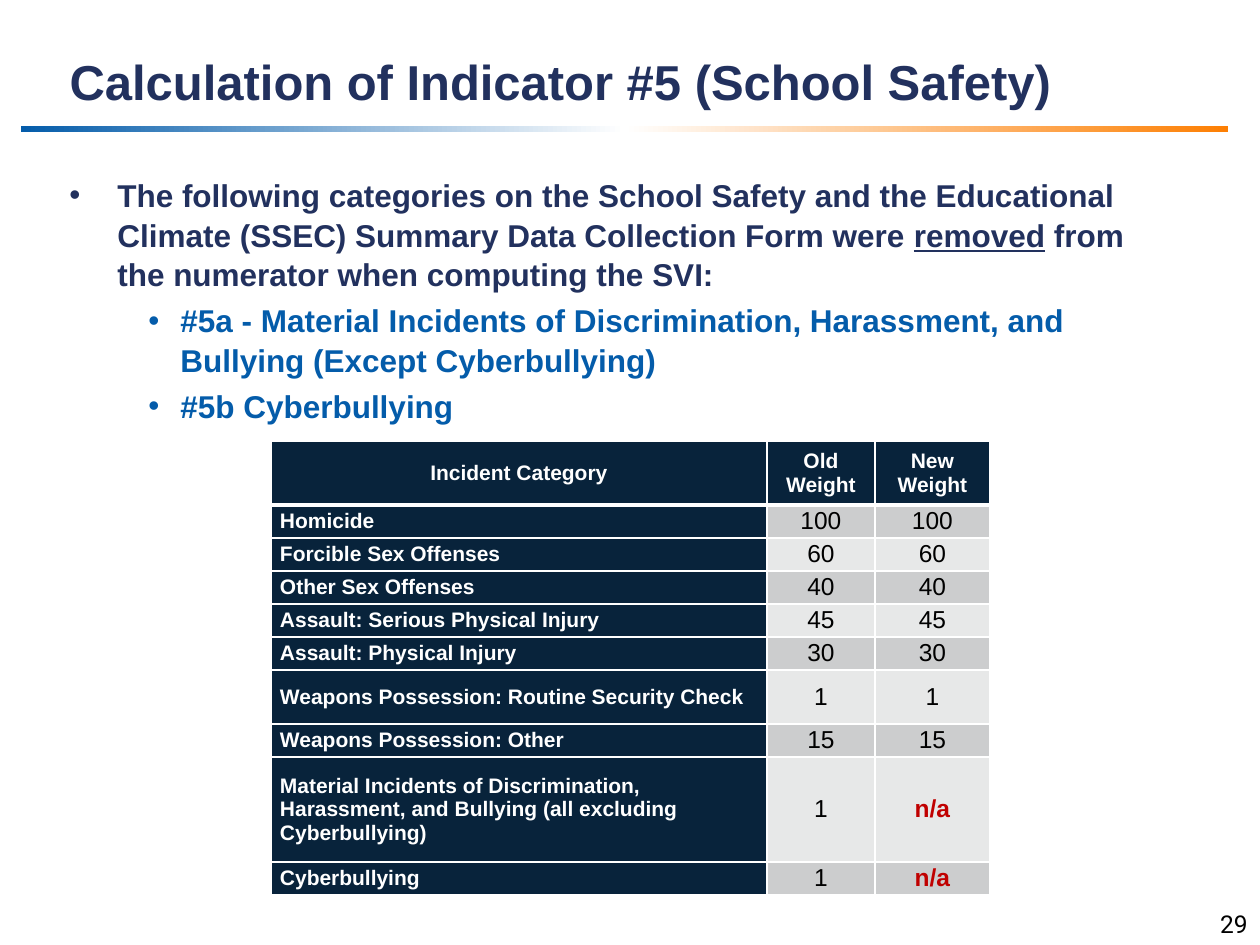
import pptx
import pptx.dml.color
import pptx.enum.shapes
import pptx.enum.text
import pptx.oxml
import pptx.oxml.ns
import pptx.util
import lxml.etree

EMU_PER_PX = 914400 / 126
ALIGN = pptx.enum.text.PP_ALIGN
ANCHOR = pptx.enum.text.MSO_ANCHOR

INDIGO, BLUE, ORANGE, NAVY = "22315E", "045CAA", "FD7F03", "08233B"
WHITE, BLACK, RED = "FFFFFF", "000000", "C00000"
BANDS = ["CCCDCE", "E7E8E8"]

COLUMN_WIDTHS = [496, 108, 115]
HEADINGS = ["Incident Category", "Old Weight", "New Weight"]
HEADER_HEIGHT = 64
INCIDENTS = [
    ("Homicide", "100", "100", 33),
    ("Forcible Sex Offenses", "60", "60", 33),
    ("Other Sex Offenses", "40", "40", 33),
    ("Assault: Serious Physical Injury", "45", "45", 33),
    ("Assault: Physical Injury", "30", "30", 33),
    ("Weapons Possession: Routine Security Check", "1", "1", 54),
    ("Weapons Possession: Other", "15", "15", 33),
    ("Material Incidents of Discrimination, Harassment, and Bullying "
     "(all excluding Cyberbullying)", "1", "n/a", 105),
    ("Cyberbullying", "1", "n/a", 33),
]


def px(length):
    return pptx.util.Emu(round(length * EMU_PER_PX))


def color(value):
    return pptx.dml.color.RGBColor.from_string(value)


def add_element(parent, tag, **attributes):
    return lxml.etree.SubElement(parent, pptx.oxml.ns.qn(tag), attributes)


def write(para, text, size=18, fill=BLACK, bold=False, underline=None, font="Arial"):
    span = para.add_run()
    span.text = text
    span.font.name = font
    span.font.size = pptx.util.Pt(size)
    span.font.bold = bold
    span.font.underline = underline
    span.font.color.rgb = color(fill)


def set_bullet(para, left, hanging):
    """Hang a bullet before text that starts at left px."""
    properties = para._p.get_or_add_pPr()
    properties.set("marL", str(px(left)))
    properties.set("indent", str(px(-hanging)))
    add_element(properties, "a:buFont", typeface="Arial")
    add_element(properties, "a:buChar", char="•")


def set_borders(cell, top=1, bottom=1):
    """Draw white borders; widths are in points."""
    properties = cell._tc.get_or_add_tcPr()
    for side, width in (("L", 1), ("R", 1), ("T", top), ("B", bottom)):
        line = add_element(properties, f"a:ln{side}", w=str(pptx.util.Pt(width)))
        solid = add_element(line, "a:solidFill")
        add_element(solid, "a:srgbClr", val=WHITE)


class SlideBuilder:
    def __init__(self, deck):
        self.slide = deck.slides.add_slide(deck.slide_layouts[5])

    def title(self, text, left, top, width, height):
        box = self.slide.shapes.title
        box.left, box.top, box.width, box.height = map(px, (left, top, width, height))
        frame = box.text_frame
        frame.auto_size = pptx.enum.text.MSO_AUTO_SIZE.NONE
        frame.vertical_anchor = ANCHOR.BOTTOM
        para = frame.paragraphs[0]
        para.alignment = ALIGN.LEFT
        para.line_spacing = pptx.util.Pt(36)
        write(para, text, size=28, fill=INDIGO, bold=True)

    def gradient_bar(self, colors, left, top, width, height):
        bar = self.slide.shapes.add_shape(
            pptx.enum.shapes.MSO_SHAPE.RECTANGLE, *map(px, (left, top, width, height)))
        bar.shadow.inherit = False
        bar.line.fill.background()
        bar.fill.gradient()
        bar.fill.gradient_angle = 0
        stops = bar._element.spPr.find(".//" + pptx.oxml.ns.qn("a:gsLst"))
        for stop in list(stops):
            stops.remove(stop)
        for index, value in enumerate(colors):
            position = index * 100000 // (len(colors) - 1)
            stop = add_element(stops, "a:gs", pos=str(position))
            add_element(stop, "a:srgbClr", val=value)

    def text_frame(self, left, top, width, height):
        box = self.slide.shapes.add_textbox(*map(px, (left, top, width, height)))
        box.text_frame.word_wrap = True
        return box.text_frame

    def bullets(self, items, left, top, width, height):
        """Each item is a level and its (text, underline) spans."""
        styles = [(48, 48, INDIGO), (111, 32, BLUE)]
        frame = self.text_frame(left, top, width, height)
        for index, (level, spans) in enumerate(items):
            para = frame.add_paragraph() if index else frame.paragraphs[0]
            indent, hanging, fill = styles[level]
            set_bullet(para, indent, hanging)
            para.level = level
            para.line_spacing = 1.05
            if index:
                para.space_before = pptx.util.Pt(3.6)
            for text, underline in spans:
                write(para, text, fill=fill, bold=True, underline=underline)

    def page_number(self, text, left, top, width, height):
        para = self.text_frame(left, top, width, height).paragraphs[0]
        para.alignment = ALIGN.RIGHT
        write(para, text, size=14, font="Roboto")

    def cell(self, cell, text, fill, align=ALIGN.CENTER, borders=None, **text_format):
        cell.margin_left = cell.margin_right = px(9)
        cell.margin_top = cell.margin_bottom = 0
        cell.vertical_anchor = ANCHOR.MIDDLE
        set_borders(cell, **(borders or {}))
        cell.fill.solid()
        cell.fill.fore_color.rgb = color(fill)
        para = cell.text_frame.paragraphs[0]
        para.alignment = align
        write(para, text, **text_format)

    def weight_table(self, left, top):
        heights = [HEADER_HEIGHT] + [incident[-1] for incident in INCIDENTS]
        table = self.slide.shapes.add_table(
            len(heights), len(COLUMN_WIDTHS), px(left), px(top),
            px(sum(COLUMN_WIDTHS)), px(sum(heights))).table
        table.first_row = table.horz_banding = False
        for column, width in zip(table.columns, COLUMN_WIDTHS):
            column.width = px(width)
        for row, height in zip(table.rows, heights):
            row.height = px(height)
        label = dict(size=12, fill_color=WHITE, bold=True)
        label = {"size": 12, "bold": True}
        for index, heading in enumerate(HEADINGS):
            self.label_cell(table.cell(0, index), heading, ALIGN.CENTER, {"bottom": 3})
        for index, (category, *weights, _) in enumerate(INCIDENTS):
            borders = {} if index else {"top": 3}
            self.label_cell(table.cell(index + 1, 0), category, ALIGN.LEFT, borders)
            for column, weight in enumerate(weights, 1):
                self.weight_cell(table.cell(index + 1, column), weight,
                                 BANDS[index % 2], borders)

    def label_cell(self, cell, text, align, borders):
        self.cell(cell, text, NAVY, align, borders)
        self.restyle(cell, 12, WHITE, True)

    def weight_cell(self, cell, text, band, borders):
        removed = text == "n/a"
        self.cell(cell, text, band, ALIGN.CENTER, borders)
        self.restyle(cell, 14, RED if removed else BLACK, removed)

    def restyle(self, cell, size, fill, bold):
        font = cell.text_frame.paragraphs[0].runs[0].font
        font.size, font.bold = pptx.util.Pt(size), bold
        font.color.rgb = color(fill)


def main():
    deck = pptx.Presentation()
    deck.slide_width, deck.slide_height = px(1260), px(945)
    page = SlideBuilder(deck)
    page.gradient_bar([BLUE, WHITE, ORANGE], 21, 126, 1207, 6)
    page.bullets([
        (0, [("The following categories on the School Safety and the Educational Climate "
              "(SSEC) Summary Data Collection Form were ", None),
             ("removed", True),
             (" from the numerator when computing the SVI:", None)]),
        (1, [("#5a - Material Incidents of Discrimination, Harassment, and Bullying "
              "(Except Cyberbullying)", None)]),
        (1, [("#5b Cyberbullying", None)]),
    ], 57, 168, 1084, 674)
    page.page_number("29", 966, 903, 294, 42)
    page.title("Calculation of Indicator #5 (School Safety)", 57, 0, 1162, 117)
    page.weight_table(271, 441)
    deck.save("out.pptx")


if __name__ == "__main__":
    main()
